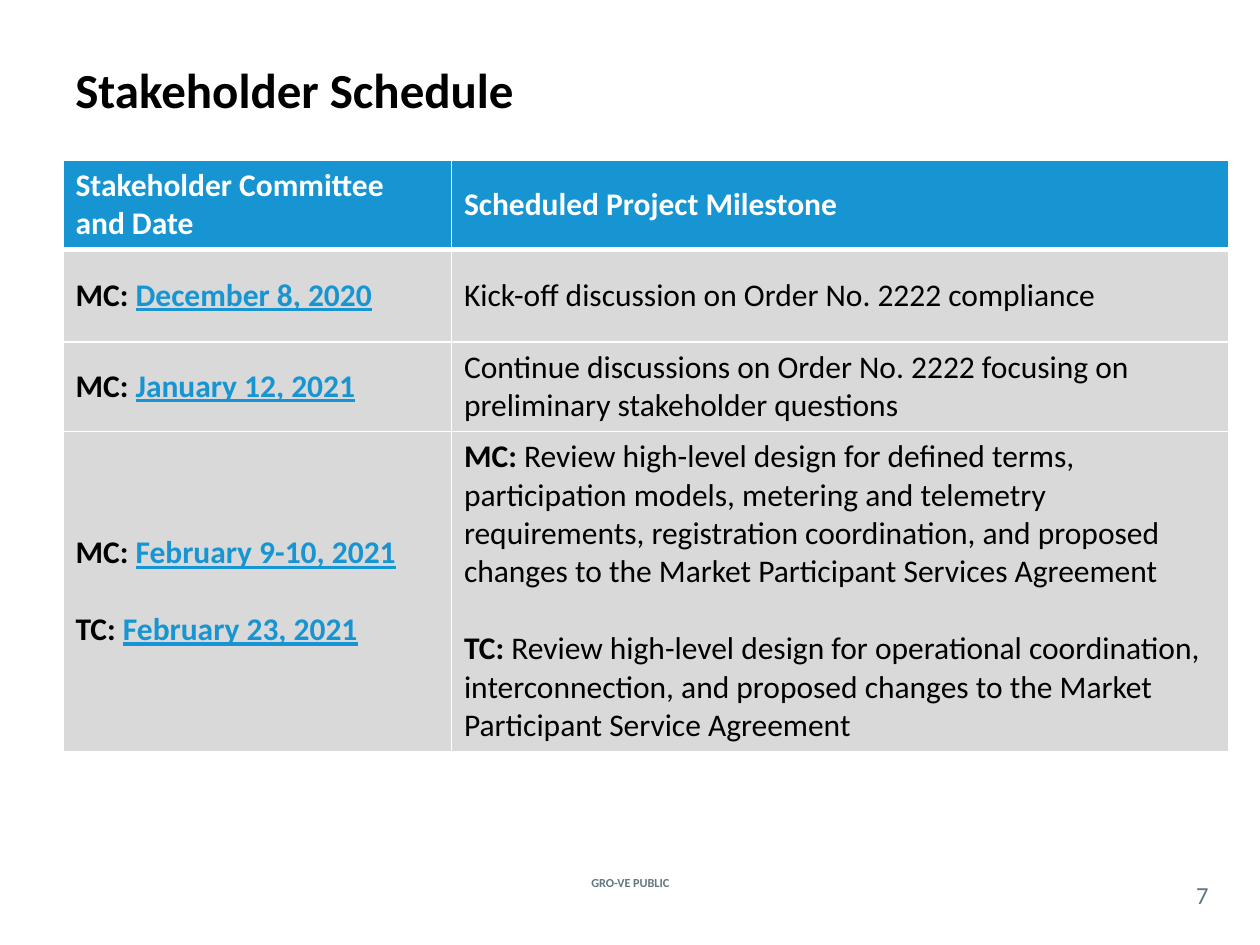
from lxml import etree
from pptx import Presentation
from pptx import util as u
from pptx.dml import color
from pptx.enum import text
from pptx.oxml import ns

BLACK, WHITE, BLUE, GREY, SLATE = "000000", "FFFFFF", "1795D2", "D9D9D9", "62777F"
HEAD = {"bold": True, "color": WHITE}
LABEL = {"bold": True}
DATE = {"bold": True, "underline": True, "color": BLUE}
PLAIN = {}

ROWS = [
    (51, [[[("Stakeholder Committee and Date", HEAD)]],
          [[("Scheduled Project Milestone", HEAD)]]]),
    (53, [[[("MC: ", LABEL), ("December 8, 2020", DATE)]],
          [[("Kick-off discussion on Order No. 2222 compliance", PLAIN)]]]),
    (51, [[[("MC: ", LABEL), ("January 12, 2021", DATE)]],
          [[("Continue discussions on Order No. 2222 focusing on "
             "preliminary stakeholder questions", PLAIN)]]]),
    (183, [[[("MC: ", LABEL), ("February 9-10, 2021", DATE)],
            [("TC: ", LABEL), ("February 23, 2021", DATE)]],
           [[("MC: ", LABEL),
             ("Review high-level design for defined terms, participation models, "
              "metering and telemetry requirements, registration coordination, and "
              "proposed changes to the Market Participant Services Agreement", PLAIN)],
            [("TC: ", LABEL),
             ("Review high-level design for operational coordination, interconnection, "
              "and proposed changes to the Market Participant Service Agreement", PLAIN)]]]),
]
COLUMN_WIDTHS = [222, 444]
TABLE_LEFT, TABLE_TOP = 36, 91.5
PARAGRAPH_GAP = 22

BOXES = [
    ("GRO-VE PUBLIC", (307.5, 498, 105.5, 12.5), "CENTER", 7.2, 0,
     {"size": 7, "bold": True, "color": SLATE}),
    ("Stakeholder Schedule", (36, 30, 648, 42), "LEFT", 7.2, 3.6,
     {"size": 28, "bold": True}),
    ("7", (672, 501, 30, 21), "CENTER", 0, 0, {"size": 14, "color": SLATE}),
]


def rgb(value):
    return color.RGBColor.from_string(value)


def set_format(target, values):
    for name, value in values.items():
        setattr(target, name, value)


def add_span(para, words, style):
    span = para.add_run()
    span.text = words
    values = {"name": "Calibri", "size": 18, "bold": False, "color": BLACK, **style}
    span.font.color.rgb = rgb(values.pop("color"))
    values["size"] = u.Pt(values["size"])
    set_format(span.font, values)


def add_box(page, words, place, align, side, edge, style):
    box = page.shapes.add_textbox(*map(u.Pt, place))
    set_format(box.text_frame, {
        "word_wrap": True,
        "vertical_anchor": text.MSO_ANCHOR.MIDDLE,
        "margin_left": u.Pt(side), "margin_right": u.Pt(side),
        "margin_top": u.Pt(edge), "margin_bottom": u.Pt(edge),
    })
    para = box.text_frame.paragraphs[0]
    para.alignment = getattr(text.PP_ALIGN, align)
    add_span(para, words, style)


def add_borders(cell, widths):
    properties = cell._tc.get_or_add_tcPr()
    for place, (side, width) in enumerate(widths.items()):
        line = etree.Element(ns.qn(f"a:ln{side}"), w=str(u.Pt(width)))
        fill = etree.SubElement(line, ns.qn("a:solidFill"))
        etree.SubElement(fill, ns.qn("a:srgbClr"), val=WHITE)
        properties.insert(place, line)


def fill_cell(cell, paragraphs, row):
    cell.vertical_anchor = text.MSO_ANCHOR.MIDDLE
    cell.fill.solid()
    cell.fill.fore_color.rgb = rgb(GREY if row else BLUE)
    add_borders(cell, {"L": 1, "R": 1, "T": 3 if row == 1 else 1, "B": 1 if row else 3})
    for index, spans in enumerate(paragraphs):
        para = cell.text_frame.add_paragraph() if index else cell.text_frame.paragraphs[0]
        if index:
            para.space_before = u.Pt(PARAGRAPH_GAP)
        for words, style in spans:
            add_span(para, words, style)


def add_schedule(page):
    size = sum(COLUMN_WIDTHS), sum(height for height, cells in ROWS)
    table = page.shapes.add_table(
        len(ROWS), len(COLUMN_WIDTHS), *map(u.Pt, (TABLE_LEFT, TABLE_TOP, *size))).table
    for column, width in zip(table.columns, COLUMN_WIDTHS):
        column.width = u.Pt(width)
    for row, (height, cells) in enumerate(ROWS):
        table.rows[row].height = u.Pt(height)
        for column, paragraphs in enumerate(cells):
            fill_cell(table.cell(row, column), paragraphs, row)


def main():
    deck = Presentation()
    deck.slide_width, deck.slide_height = u.Pt(720), u.Pt(540)
    page = deck.slides.add_slide(deck.slide_layouts[6])
    for box in BOXES:
        add_box(page, *box)
    add_schedule(page)
    deck.save("out.pptx")


if __name__ == "__main__":
    main()
